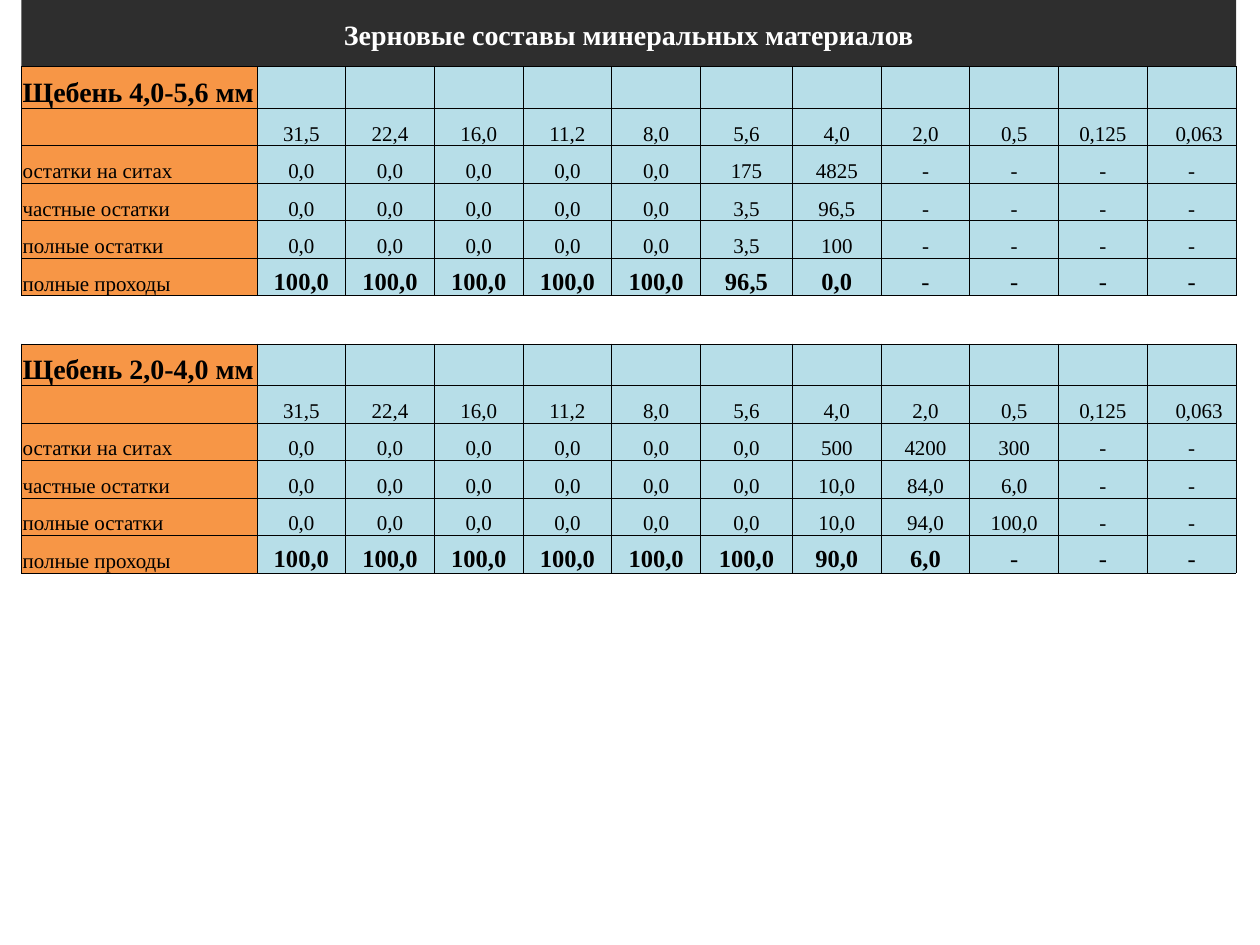
"""Build a slide with sieve-analysis tables for two crushed-stone fractions."""
from dataclasses import dataclass

import lxml.etree
import pptx
import pptx.dml.color
import pptx.enum.dml
import pptx.enum.text
import pptx.oxml.ns
import pptx.util

Inches = pptx.util.Inches
RGBColor = pptx.dml.color.RGBColor
Align = pptx.enum.text.PP_ALIGN
Anchor = pptx.enum.text.MSO_ANCHOR
qn = pptx.oxml.ns.qn

BLACK = RGBColor(0x00, 0x00, 0x00)
WHITE = RGBColor(0xFF, 0xFF, 0xFF)
ORANGE = RGBColor(0xF7, 0x96, 0x46)
PALE_BLUE = RGBColor(0xB7, 0xDE, 0xE8)
FONT = "Times New Roman"

LEFT, WIDTH = 0.17, 9.64
LABEL_WIDTH, WIDE_SIEVE_WIDTH = 1.87, 0.73
TABLE_HEIGHT, HEADING_HEIGHT = 1.82, 0.33
SIEVES = "31,5 22,4 16,0 11,2 8,0 5,6 4,0 2,0 0,5 0,125 0,063".split()
WIDE_SIEVE = SIEVES.index("5,6") + 1
LABELS = ("остатки на ситах", "частные остатки", "полные остатки", "полные проходы")


@dataclass(frozen=True)
class Fraction:
    name: str
    top: float
    results: tuple[str, ...]


FRACTIONS = (
    Fraction("Щебень 4,0-5,6 мм", 0.53, (
        "0,0 0,0 0,0 0,0 0,0 175 4825 - - - -",
        "0,0 0,0 0,0 0,0 0,0 3,5 96,5 - - - -",
        "0,0 0,0 0,0 0,0 0,0 3,5 100 - - - -",
        "100,0 100,0 100,0 100,0 100,0 96,5 0,0 - - - -",
    )),
    Fraction("Щебень 2,0-4,0 мм", 2.73, (
        "0,0 0,0 0,0 0,0 0,0 0,0 500 4200 300 - -",
        "0,0 0,0 0,0 0,0 0,0 0,0 10,0 84,0 6,0 - -",
        "0,0 0,0 0,0 0,0 0,0 0,0 10,0 94,0 100,0 - -",
        "100,0 100,0 100,0 100,0 100,0 100,0 90,0 6,0 - - -",
    )),
)


def write(frame, text: str, *, size: float = 12, bold: bool = False,
          color: RGBColor = BLACK, align=Align.CENTER) -> None:
    """Put one formatted line into a text frame."""
    paragraph = frame.paragraphs[0]
    paragraph.alignment = align
    if not text:
        end = lxml.etree.SubElement(paragraph._p, qn("a:endParaRPr"))
        end.set("sz", str(int(size * 100)))
        return
    run = paragraph.add_run()
    run.text = text
    run.font.name = FONT
    run.font.size = pptx.util.Pt(size)
    run.font.bold = bold
    run.font.color.rgb = color


def style_cell(cell, fill: RGBColor) -> None:
    """Give a cell thin black borders, a fill, tight margins and bottom anchoring."""
    properties = cell._tc.get_or_add_tcPr()
    for side in ("a:lnL", "a:lnR", "a:lnT", "a:lnB"):
        line = lxml.etree.SubElement(properties, qn(side), w=str(pptx.util.Pt(0.5)))
        solid = lxml.etree.SubElement(line, qn("a:solidFill"))
        lxml.etree.SubElement(solid, qn("a:srgbClr"), val=str(BLACK))
    cell.fill.solid()
    cell.fill.fore_color.rgb = fill
    cell.margin_left = cell.margin_right = cell.margin_top = Inches(0.01)
    cell.margin_bottom = 0
    cell.vertical_anchor = Anchor.BOTTOM


def draw_title(slide, text: str) -> None:
    """Draw the translucent title bar."""
    title = slide.shapes.title
    title.left, title.top = Inches(LEFT), Inches(0.09)
    title.width, title.height = Inches(WIDTH), Inches(0.37)
    title.fill.solid()
    title.fill.fore_color.rgb = BLACK
    color = title._element.spPr.find(".//" + qn("a:srgbClr"))
    lxml.etree.SubElement(color, qn("a:alpha"), val="82000")
    title.text_frame.auto_size = pptx.enum.text.MSO_AUTO_SIZE.SHAPE_TO_FIT_TEXT
    write(title.text_frame, text, size=16, bold=True, color=WHITE)


def draw_fraction(slide, fraction: Fraction) -> None:
    """Draw the sieve table of one fraction."""
    rows = [[fraction.name] + [""] * len(SIEVES), [""] + SIEVES]
    rows += [[label] + result.split() for label, result in zip(LABELS, fraction.results)]
    table = slide.shapes.add_table(
        len(rows), len(rows[0]), Inches(LEFT), Inches(fraction.top),
        Inches(WIDTH), Inches(TABLE_HEIGHT)).table
    table.first_row = table.horz_banding = False

    sieve_width = (WIDTH - LABEL_WIDTH - WIDE_SIEVE_WIDTH) / (len(SIEVES) - 1)
    special_widths = {0: LABEL_WIDTH, WIDE_SIEVE: WIDE_SIEVE_WIDTH}
    for index, column in enumerate(table.columns):
        column.width = Inches(special_widths.get(index, sieve_width))
    result_height = (TABLE_HEIGHT - HEADING_HEIGHT) / (len(rows) - 1)
    for index, row in enumerate(table.rows):
        row.height = Inches(result_height if index else HEADING_HEIGHT)

    for row_index, values in enumerate(rows):
        for column_index, value in enumerate(values):
            cell = table.cell(row_index, column_index)
            is_label = column_index == 0
            is_heading = is_label and row_index == 0
            is_passing = not is_label and row_index == len(rows) - 1
            style_cell(cell, ORANGE if is_label else PALE_BLUE)
            if value == SIEVES[-1]:
                cell.margin_left = Inches(0.13)
            write(cell.text_frame, value,
                  size=16 if is_heading else 14 if is_passing else 12,
                  bold=is_heading or (is_passing and value != "-"),
                  align=Align.LEFT if is_label else Align.CENTER)


def main() -> None:
    """Build and save the slide."""
    presentation = pptx.Presentation()
    presentation.slide_width, presentation.slide_height = Inches(10), Inches(7.5)
    slide = presentation.slides.add_slide(presentation.slide_layouts[5])
    draw_title(slide, "Зерновые составы минеральных материалов")
    for fraction in FRACTIONS:
        draw_fraction(slide, fraction)
    presentation.save("out.pptx")


if __name__ == "__main__":
    main()
